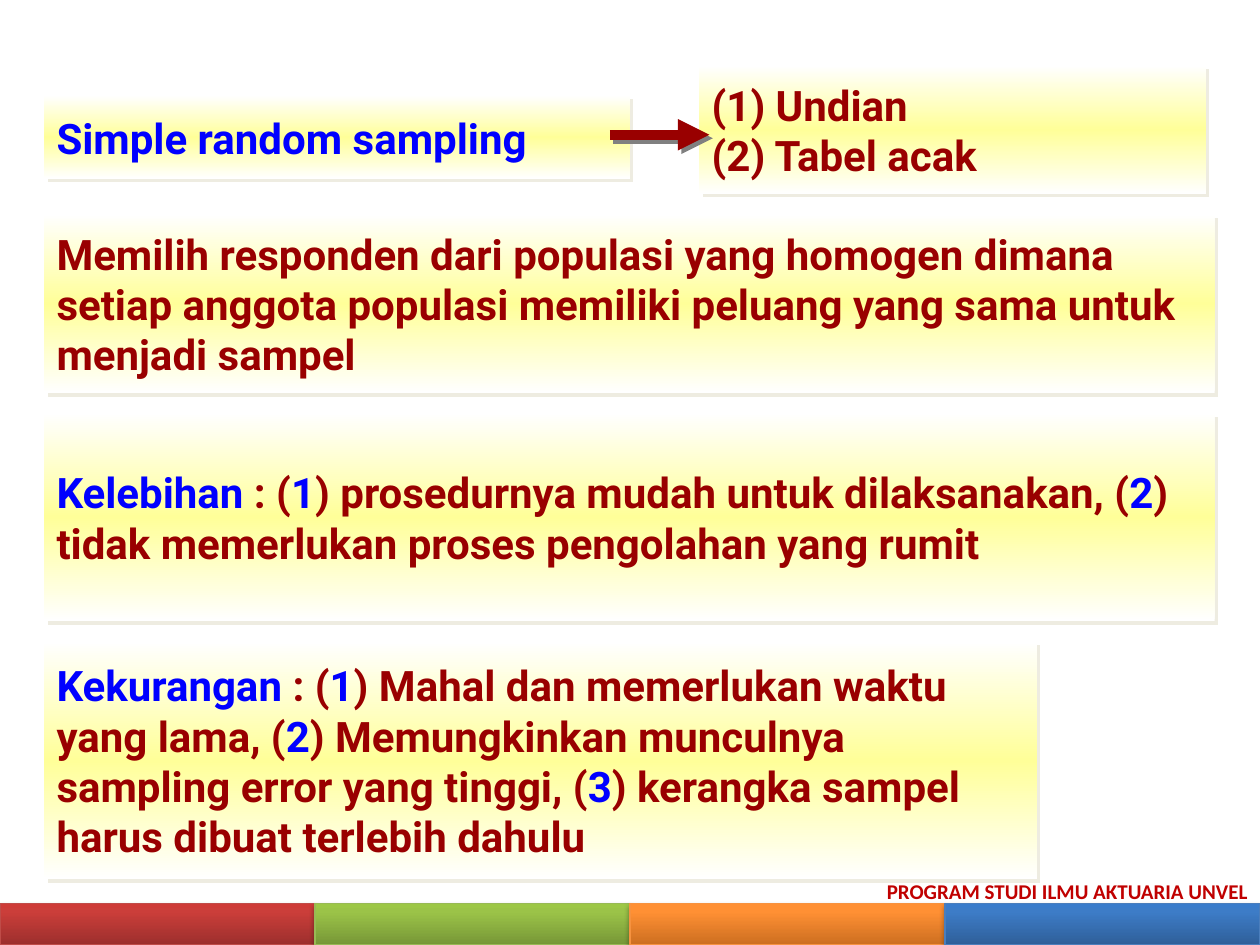
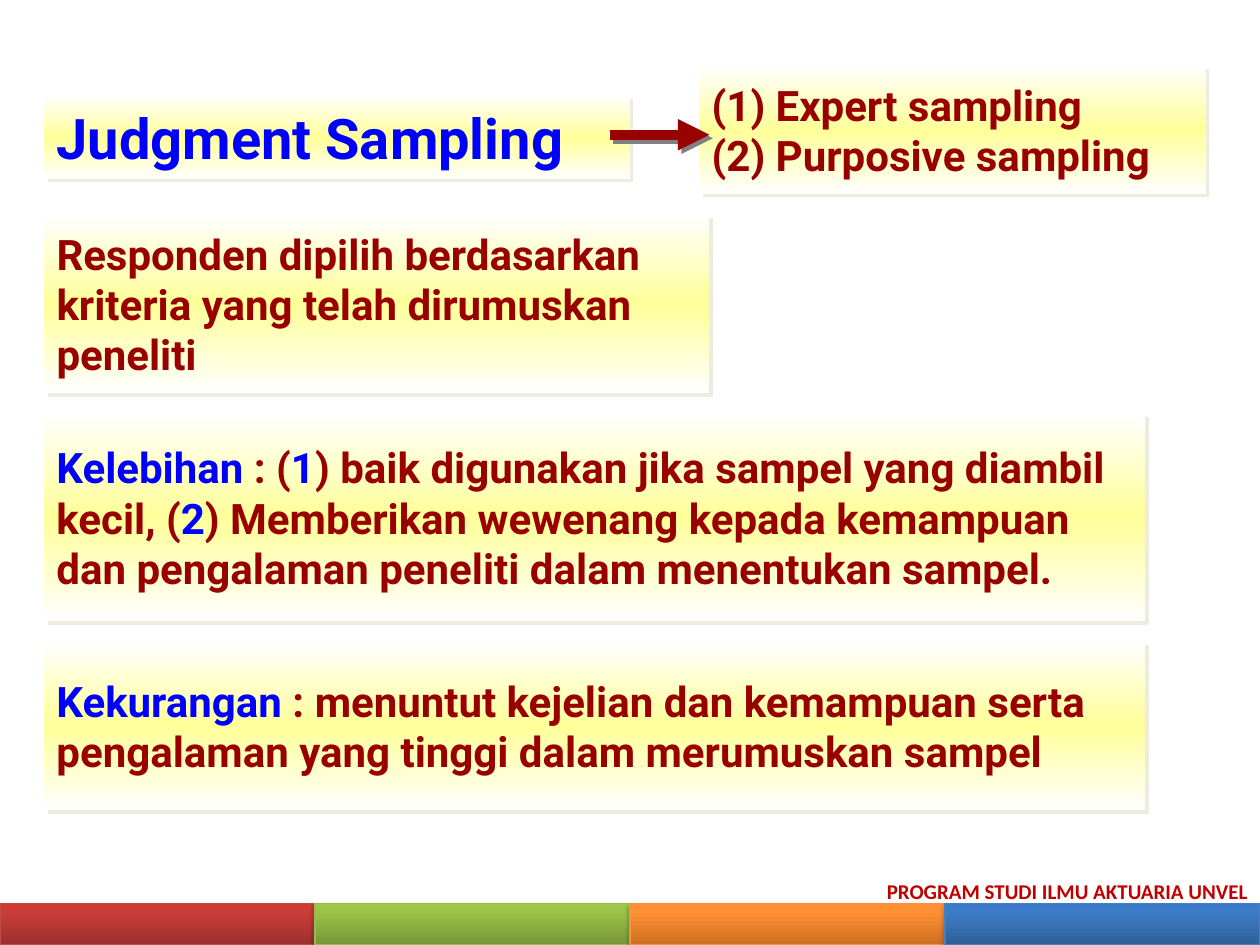
import pptx
import pptx.dml.color
import pptx.enum.shapes
import pptx.enum.text
import pptx.oxml
import pptx.oxml.ns
import pptx.util

Pt = pptx.util.Pt
qn = pptx.oxml.ns.qn
SHAPES = pptx.enum.shapes
ANCHOR = pptx.enum.text.MSO_ANCHOR

PAGE_WIDTH, PAGE_HEIGHT = 720, 540
LEFT = 25.2
BAND_HEIGHT = 23.76
BLUE, MAROON, RED = "0000FF", "990000", "C00000"
YELLOW_GLOW = [(0, "FFFFFF"), (50, "FFFF99"), (100, "FFFFFF")]
# gradient from bottom to top, then outline
BANDS = [
    (("9C2F2D", "CB3E3A", "CE3B37"), "BF4C48"),
    (("779737", "9BC348", "9DC746"), "98B955"),
    (("CC6E20", "FF9034", "FF9136"), "F69240"),
    (("2F5F99", "3D7CC7", "3A7CCB"), "4B7EBC"),
]
BOX_SHADOW = {"color": "EEECE1"}
ARROW_SHADOW = {"color": "808080"}
BAND_SHADOW = {"color": "000000", "alpha": 35, "blur": 3.1, "distance": 1.8, "angle": 90}
FOOTER = "PROGRAM STUDI ILMU AKTUARIA UNVEL"

PAGES = [
    {
        "title": ("Simple random sampling", 24),
        "kinds": ["Undian", "Tabel acak"],
        "panels": [
            (122.4, 668.88, 102.24,
             "Memilih responden dari populasi yang homogen dimana setiap anggota "
             "populasi memiliki peluang yang sama untuk menjadi sampel"),
            (236.16, 668.88, 118.8,
             "*Kelebihan* : (*1*) prosedurnya mudah untuk dilaksanakan, "
             "(*2*) tidak memerlukan proses pengolahan yang rumit"),
            (366.48, 567.36, 136.08,
             "*Kekurangan* : (*1*) Mahal dan memerlukan waktu yang lama, "
             "(*2*) Memungkinkan munculnya sampling error yang tinggi, "
             "(*3*) kerangka sampel harus dibuat terlebih dahulu"),
        ],
    },
    {
        "title": ("Judgment Sampling", 32),
        "kinds": ["Expert sampling", "Purposive sampling"],
        "panels": [
            (122.4, 380.16, 102.24,
             "Responden dipilih berdasarkan kriteria yang telah dirumuskan peneliti"),
            (236.16, 629.28, 118.8,
             "*Kelebihan* : (*1*) baik digunakan jika sampel yang diambil kecil, "
             "(*2*) Memberikan wewenang kepada kemampuan dan pengalaman peneliti "
             "dalam menentukan sampel."),
            (366.48, 629.28, 96.48,
             "*Kekurangan* : menuntut kejelian dan kemampuan serta pengalaman "
             "yang tinggi dalam merumuskan sampel"),
        ],
    },
]


def rgb(color):
    return pptx.dml.color.RGBColor.from_string(color)


def add_xml(parent, tag, **attributes):
    element = pptx.oxml.parse_xml(f"<{tag} {pptx.oxml.ns.nsdecls('a')}/>")
    for name, value in attributes.items():
        element.set(name, str(value))
    parent.append(element)
    return element


class SlideBuilder:
    """Holds the shared style and the slide being drawn."""

    text_format = {"name": "Roboto", "size": Pt(24), "bold": True}
    footer_format = {"name": "Calibri", "size": Pt(12), "bold": True}

    def __init__(self, deck):
        self.deck = deck
        self.page = None

    def new_page(self):
        self.page = self.deck.slides.add_slide(self.deck.slide_layouts[6])

    def shadow(self, effects, color, alpha=100, blur=0, distance=2.8, angle=45):
        outer = add_xml(effects, "a:outerShdw", blurRad=int(Pt(blur)), dist=int(Pt(distance)),
                        dir=angle * 60000, algn="ctr", rotWithShape=0)
        tint = add_xml(outer, "a:srgbClr", val=color)
        add_xml(tint, "a:alpha", val=alpha * 1000)

    def gradient_box(self, left, top, width, height, stops, angle, shadow):
        """Rectangle with a gradient; angle is counter-clockwise, in degrees."""
        box = self.page.shapes.add_shape(SHAPES.MSO_SHAPE.RECTANGLE,
                                         Pt(left), Pt(top), Pt(width), Pt(height))
        box.fill.gradient()
        box.fill.gradient_angle = angle
        properties = box.element.spPr
        stop_list = properties.find(qn("a:gradFill")).find(qn("a:gsLst"))
        for stop in list(stop_list):
            stop_list.remove(stop)
        for position, color in stops:
            add_xml(add_xml(stop_list, "a:gs", pos=position * 1000), "a:srgbClr", val=color)
        box.line.fill.background()
        box.shadow.inherit = False
        self.shadow(properties.find(qn("a:effectLst")), **shadow)
        return box

    def span(self, para, text, color, text_format):
        span = para.add_run()
        span.text = text
        for name, value in text_format.items():
            setattr(span.font, name, value)
        span.font.color.rgb = rgb(color)

    def panel(self, left, top, width, height, lines, size=24, numbered=False):
        """Yellow box; text between asterisks is blue."""
        box = self.gradient_box(left, top, width, height, YELLOW_GLOW, 270, BOX_SHADOW)
        frame = box.text_frame
        frame.word_wrap = True
        frame.vertical_anchor = ANCHOR.MIDDLE
        text_format = {**self.text_format, "size": Pt(size)}
        for index, line in enumerate(lines):
            para = frame.add_paragraph() if index else frame.paragraphs[0]
            para.alignment = pptx.enum.text.PP_ALIGN.LEFT
            if numbered:
                self.number(para)
            for part, text in enumerate(line.split("*")):
                if text:
                    self.span(para, text, BLUE if part % 2 else MAROON, text_format)

    def number(self, para):
        properties = para._p.get_or_add_pPr()
        indent = int(Pt(27))
        properties.set("marL", str(indent))
        properties.set("indent", str(-indent))
        add_xml(properties, "a:buFont", typeface="Roboto")
        add_xml(properties, "a:buAutoNum", type="arabicParenBoth")

    def arrow(self, start, end, height):
        arrow = self.page.shapes.add_connector(SHAPES.MSO_CONNECTOR.STRAIGHT,
                                               Pt(start), Pt(height), Pt(end), Pt(height))
        arrow.line.color.rgb = rgb(MAROON)
        arrow.line.width = Pt(6)
        properties = arrow.element.spPr
        add_xml(properties.find(qn("a:ln")), "a:tailEnd", type="triangle")
        self.shadow(add_xml(properties, "a:effectLst"), **ARROW_SHADOW)

    def footer(self):
        width = PAGE_WIDTH / len(BANDS)
        for index, (colors, outline) in enumerate(BANDS):
            band = self.gradient_box(index * width, PAGE_HEIGHT - BAND_HEIGHT, width, BAND_HEIGHT,
                                     zip((0, 80, 100), colors), 90, BAND_SHADOW)
            band.line.color.rgb = rgb(outline)
            band.line.width = Pt(0.75)
        box = self.page.shapes.add_textbox(Pt(499.68), Pt(498.24), Pt(226.08), Pt(21.6))
        box.text_frame.word_wrap = False
        box.text_frame.auto_size = pptx.enum.text.MSO_AUTO_SIZE.SHAPE_TO_FIT_TEXT
        self.span(box.text_frame.paragraphs[0], FOOTER, RED, self.footer_format)


def main():
    deck = pptx.Presentation()
    deck.slide_width, deck.slide_height = Pt(PAGE_WIDTH), Pt(PAGE_HEIGHT)
    builder = SlideBuilder(deck)
    for content in PAGES:
        builder.new_page()
        title, title_size = content["title"]
        builder.panel(LEFT, 54.72, 334.8, 47.52, [f"*{title}*"], title_size)
        builder.panel(399.6, 37.44, 289.44, 73.44,
                      [f" {kind}" for kind in content["kinds"]], numbered=True)
        builder.arrow(348.48, 405.36, 77.04)
        for top, width, height, text in content["panels"]:
            builder.panel(LEFT, top, width, height, [text])
        builder.footer()
    deck.save("out.pptx")


if __name__ == "__main__":
    main()
